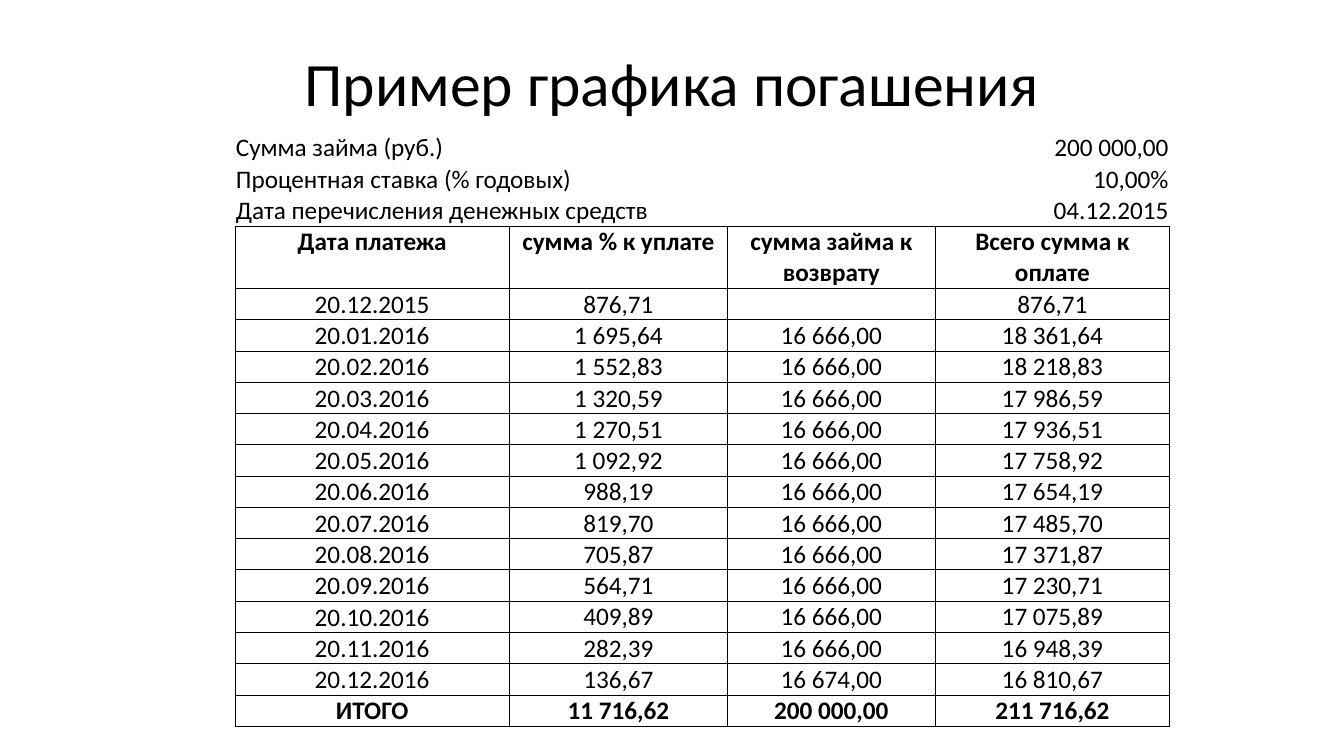
from lxml import etree
from pptx import Presentation, util as u
from pptx.dml.color import RGBColor
from pptx.enum import text
from pptx.oxml.ns import qn

HUES = {"ink": "000000"}
FONT = "Calibri"
PLAIN = "{2D5ABB26-0587-4C30-8999-92F81FD0307C}"
TERMS = [
    ("Сумма займа (руб.)", "200 000,00", 1),
    ("Процентная ставка (% годовых)", "10,00%", 1),
    ("Дата перечисления денежных средств", "04.12.2015", 2),
]
HEAD = ("Дата платежа", "сумма % к уплате", "сумма займа к возврату", "Всего сумма к оплате")
DUES = [
    ("20.12.2015", "876,71", "", "876,71"),
    ("20.01.2016", "1 695,64", "16 666,00", "18 361,64"),
    ("20.02.2016", "1 552,83", "16 666,00", "18 218,83"),
    ("20.03.2016", "1 320,59", "16 666,00", "17 986,59"),
    ("20.04.2016", "1 270,51", "16 666,00", "17 936,51"),
    ("20.05.2016", "1 092,92", "16 666,00", "17 758,92"),
    ("20.06.2016", "988,19", "16 666,00", "17 654,19"),
    ("20.07.2016", "819,70", "16 666,00", "17 485,70"),
    ("20.08.2016", "705,87", "16 666,00", "17 371,87"),
    ("20.09.2016", "564,71", "16 666,00", "17 230,71"),
    ("20.10.2016", "409,89", "16 666,00", "17 075,89"),
    ("20.11.2016", "282,39", "16 666,00", "16 948,39"),
    ("20.12.2016", "136,67", "16 674,00", "16 810,67"),
]
TOTAL = ("ИТОГО", "11 716,62", "200 000,00", "211 716,62")
COLS = (2.72, 2.16, 2.06, 2.32)


def style(para, size, align, bold=False):
    """Align a paragraph and format its runs."""
    para.alignment = align
    for run in para.runs:
        run.font.name = FONT
        run.font.size = u.Pt(size)
        run.font.bold = bold
        run.font.color.rgb = RGBColor.from_string(HUES["ink"])


def edge(cell, sides):
    """Draw thin lines on the given sides of a cell."""
    props = cell._tc.get_or_add_tcPr()
    for side in sides:
        line = etree.SubElement(props, qn("a:ln" + side), w=str(u.Pt(0.5)))
        fill = etree.SubElement(line, qn("a:solidFill"))
        etree.SubElement(fill, qn("a:srgbClr"), val=HUES["ink"])


def put(cell, words, align, low, sides="", bold=False):
    """Fill one cell with text, margins and borders."""
    cell.margin_left = cell.margin_right = cell.margin_top = u.Inches(0.01)
    cell.margin_bottom = 0
    cell.vertical_anchor = text.MSO_ANCHOR.BOTTOM if low else text.MSO_ANCHOR.TOP
    edge(cell, sides)
    cell.fill.background()
    para = cell.text_frame.paragraphs[0]
    para.text = words
    style(para, 18, align, bold)
    if not words:
        para.font.size = u.Pt(18)


def title(slide, x, y, w, h):
    """Place the slide heading in its box."""
    box = slide.shapes.add_textbox(*map(u.Inches, (x, y, w, h)))
    frame = box.text_frame
    frame.word_wrap = True
    frame.vertical_anchor = text.MSO_ANCHOR.MIDDLE
    frame.text = "Пример графика погашения"
    para = frame.paragraphs[0]
    para.line_spacing = 0.9
    style(para, 44, text.PP_ALIGN.CENTER)


def plan(slide, x, y, w, h):
    """Place the loan terms and the payment grid in one table."""
    grid = [HEAD, *DUES, TOTAL]
    count = len(TERMS) + len(grid)
    frame = slide.shapes.add_table(count, len(COLS), *map(u.Inches, (x, y, w, h)))
    table = frame.table
    table.first_row = table.horz_banding = False
    table._tbl.tblPr.find(qn("a:tableStyleId")).text = PLAIN
    for col, width in zip(table.columns, COLS):
        col.width = u.Inches(w * width / sum(COLS))
    unit = h / (count + 1)
    for i, row in enumerate(table.rows):
        row.height = u.Inches(unit * (2 if i == len(TERMS) else 1))

    for i, (name, value, last) in enumerate(TERMS):
        sides = "B" if i == len(TERMS) - 1 else ""
        for j in range(len(COLS)):
            words = {0: name, 3: value}.get(j, "")
            align = text.PP_ALIGN.RIGHT if j == 3 else text.PP_ALIGN.LEFT
            put(table.cell(i, j), words, align, True, sides)
        table.cell(i, 0).merge(table.cell(i, last))

    for i, line in enumerate(grid):
        for j, words in enumerate(line):
            put(table.cell(len(TERMS) + i, j), words, text.PP_ALIGN.CENTER,
                i > 0 and j > 0, "LRTB", line in (HEAD, TOTAL))


def main():
    """Build and save the slide."""
    deck = Presentation()
    deck.slide_width, deck.slide_height = u.Inches(13.33), u.Inches(7.5)
    slide = deck.slides.add_slide(deck.slide_layouts[6])
    title(slide, 0.92, 0.4, 11.5, 0.91)
    plan(slide, 2.33, 1.31, 9.27, 5.89)
    deck.save("out.pptx")


if __name__ == "__main__":
    main()
